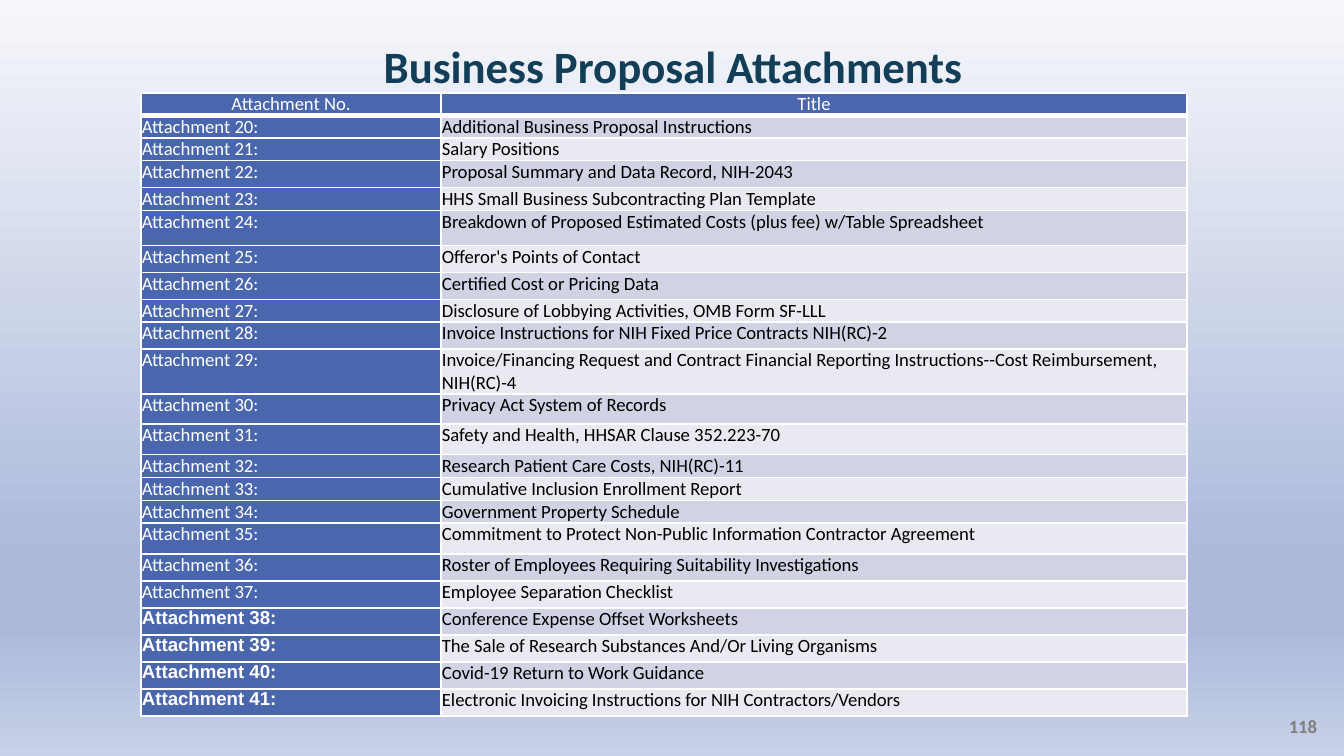
from lxml.etree import SubElement
from pptx import Presentation
from pptx.dml.color import RGBColor
from pptx.enum.text import MSO_ANCHOR, PP_ALIGN
from pptx.oxml import parse_xml
from pptx.oxml.ns import nsdecls, qn
from pptx.util import Pt

EMU_PER_PX = 914400 / 134.4

COLORS = {
    "title": "123E57",
    "page": "7F7F7F",
    "head": "4A66AC",
    "odd": "D0D3E3",
    "even": "E9EAF1",
    "white": "FFFFFF",
    "black": "000000",
}
BACKGROUND_STOPS = [(0, "F6F7FB"), (74, "ACB9DB"), (83, "ACB9DB"), (100, "C8D1E7")]

BODY = {"name": "Calibri", "size": Pt(10), "bold": False}
LATE_NUMBER = {"name": "Arial", "size": Pt(10), "bold": True}
TITLE = {"name": "Calibri", "size": Pt(24), "bold": True}
PAGE = {"name": "Calibri", "size": Pt(10), "bold": True}

FIRST_NUMBER = 20
FIRST_LATE_NUMBER = 38
HEADER_HEIGHT = 22
COLUMN_WIDTHS = [300, 746]
# Attachment title and its row height
ATTACHMENTS = [
    ("Additional Business Proposal Instructions", 22),
    ("Salary Positions", 22),
    ("Proposal Summary and Data Record, NIH-2043", 27),
    ("HHS Small Business Subcontracting Plan Template", 23),
    ("Breakdown of Proposed Estimated Costs (plus fee) w/Table Spreadsheet", 35),
    ("Offeror's Points of Contact", 27),
    ("Certified Cost or Pricing Data", 27),
    ("Disclosure of Lobbying Activities, OMB Form SF-LLL", 22),
    ("Invoice Instructions for NIH Fixed Price Contracts NIH(RC)-2", 27),
    ("Invoice/Financing Request and Contract Financial Reporting "
     "Instructions--Cost Reimbursement, NIH(RC)-4", 43),
    ("Privacy Act System of Records", 30),
    ("Safety and Health, HHSAR Clause 352.223-70", 31),
    ("Research Patient Care Costs, NIH(RC)-11", 23),
    ("Cumulative Inclusion Enrollment Report", 23),
    ("Government Property Schedule", 22),
    ("Commitment to Protect Non-Public Information Contractor Agreement", 31),
    ("Roster of Employees Requiring Suitability Investigations", 27),
    ("Employee Separation Checklist", 27),
    ("Conference Expense Offset Worksheets", 27),
    ("The Sale of Research Substances And/Or Living Organisms", 27),
    ("Covid-19 Return to Work Guidance", 27),
    ("Electronic Invoicing Instructions for NIH Contractors/Vendors", 27),
]


def px(length):
    return round(length * EMU_PER_PX)


def rgb(color):
    return RGBColor.from_string(COLORS[color])


def set_margins(target, side):
    margins = {"margin_left": side, "margin_right": side,
               "margin_top": 0, "margin_bottom": 0}
    for name, length in margins.items():
        setattr(target, name, px(length))


def write_text(frame, text, font_format, color, align):
    paragraph = frame.paragraphs[0]
    paragraph.alignment = align
    run = paragraph.add_run()
    run.text = text
    for name, value in font_format.items():
        setattr(run.font, name, value)
    run.font.color.rgb = rgb(color)
    return paragraph


def add_label(slide, box, text, font_format, color, align, anchor, spacing):
    frame = slide.shapes.add_textbox(*map(px, box)).text_frame
    frame.word_wrap = True
    frame.vertical_anchor = anchor
    set_margins(frame, 0)
    paragraph = write_text(frame, text, font_format, color, align)
    paragraph.line_spacing = spacing


def set_background(slide):
    stops = "".join(
        f'<a:gs pos="{position * 1000}"><a:srgbClr val="{color}"/></a:gs>'
        for position, color in BACKGROUND_STOPS)
    background = parse_xml(
        f'<p:bg {nsdecls("p", "a")}><p:bgPr><a:gradFill rotWithShape="1">'
        f'<a:gsLst>{stops}</a:gsLst><a:lin ang="5400000" scaled="0"/>'
        '</a:gradFill><a:effectLst/></p:bgPr></p:bg>')
    slide.element.cSld.insert(0, background)


def set_borders(cell, bottom):
    properties = cell._tc.get_or_add_tcPr()
    widths = {"a:lnL": 1, "a:lnR": 1, "a:lnT": 1, "a:lnB": bottom}
    for index, (side, width) in enumerate(widths.items()):
        line = SubElement(properties, qn(side), w=str(Pt(width)))
        properties.insert(index, line)
        fill = SubElement(line, qn("a:solidFill"))
        SubElement(fill, qn("a:srgbClr"), val=COLORS["white"])


def fill_cell(cell, text, fill, color, font_format=BODY, align=PP_ALIGN.LEFT, bottom=1):
    set_margins(cell, 1)
    cell.fill.solid()
    cell.fill.fore_color.rgb = rgb(fill)
    write_text(cell.text_frame, text, font_format, color, align)
    set_borders(cell, bottom)


def add_attachment_table(slide):
    heights = [HEADER_HEIGHT] + [height for _, height in ATTACHMENTS]
    box = (141, 93, sum(COLUMN_WIDTHS), sum(heights))
    table = slide.shapes.add_table(
        len(heights), len(COLUMN_WIDTHS), *map(px, box)).table
    for column, width in zip(table.columns, COLUMN_WIDTHS):
        column.width = px(width)
    for row, height in zip(table.rows, heights):
        row.height = px(height)

    # Header row
    for column, heading in enumerate(["Attachment No.", "Title"]):
        fill_cell(table.cell(0, column), heading, "head", "white",
                  align=PP_ALIGN.CENTER, bottom=3)

    # One row per attachment, in alternating bands
    for row, (title, _) in enumerate(ATTACHMENTS, start=1):
        number = FIRST_NUMBER + row - 1
        number_format = LATE_NUMBER if number >= FIRST_LATE_NUMBER else BODY
        band = "odd" if row % 2 else "even"
        fill_cell(table.cell(row, 0), f"Attachment {number}:", "head", "white",
                  number_format)
        fill_cell(table.cell(row, 1), title, band, "black")


def main():
    presentation = Presentation()
    presentation.slide_width = px(1344)
    presentation.slide_height = px(756)
    slide = presentation.slides.add_slide(presentation.slide_layouts[6])

    set_background(slide)
    # Page number and title
    add_label(slide, (1271, 715, 46, 27), "118", PAGE, "page",
              PP_ALIGN.RIGHT, MSO_ANCHOR.TOP, 1.01)
    add_label(slide, (73, 46, 1200, 47), "Business Proposal Attachments", TITLE,
              "title", PP_ALIGN.CENTER, MSO_ANCHOR.BOTTOM, 0.9)
    add_attachment_table(slide)

    presentation.save("out.pptx")


if __name__ == "__main__":
    main()
